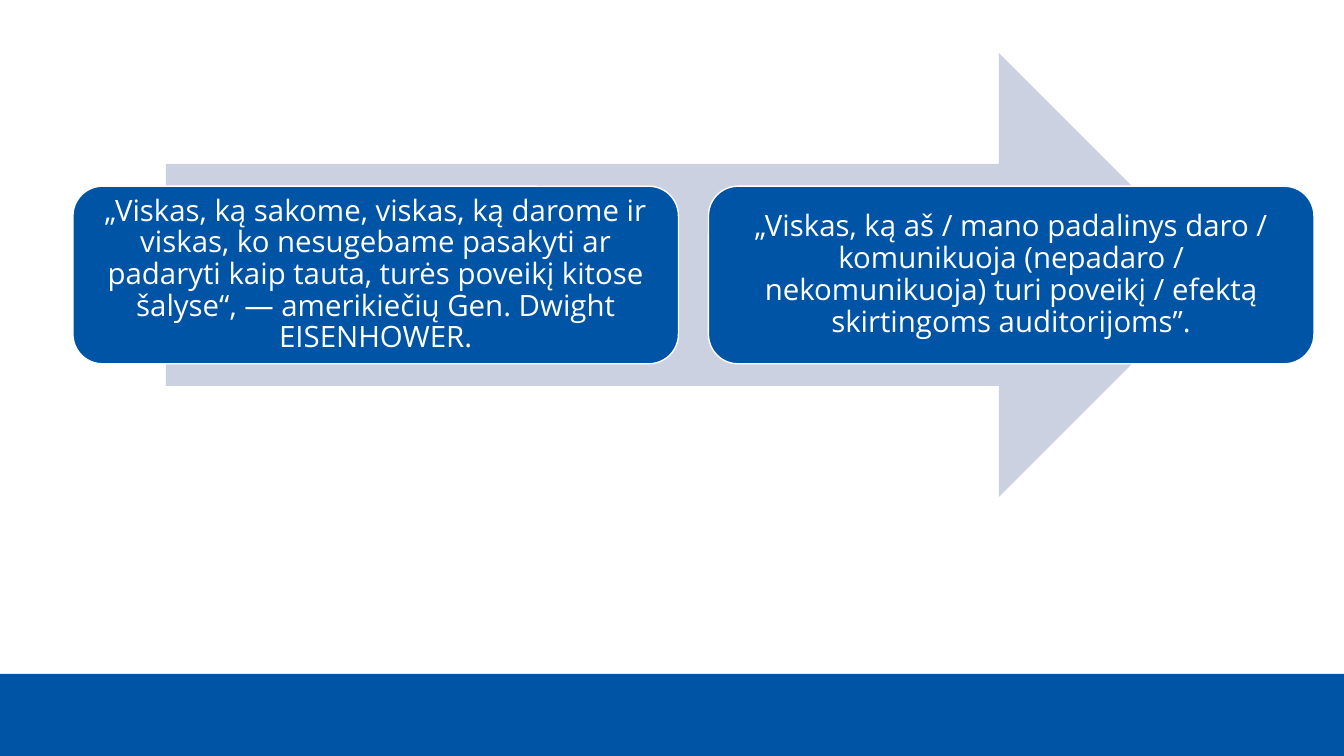
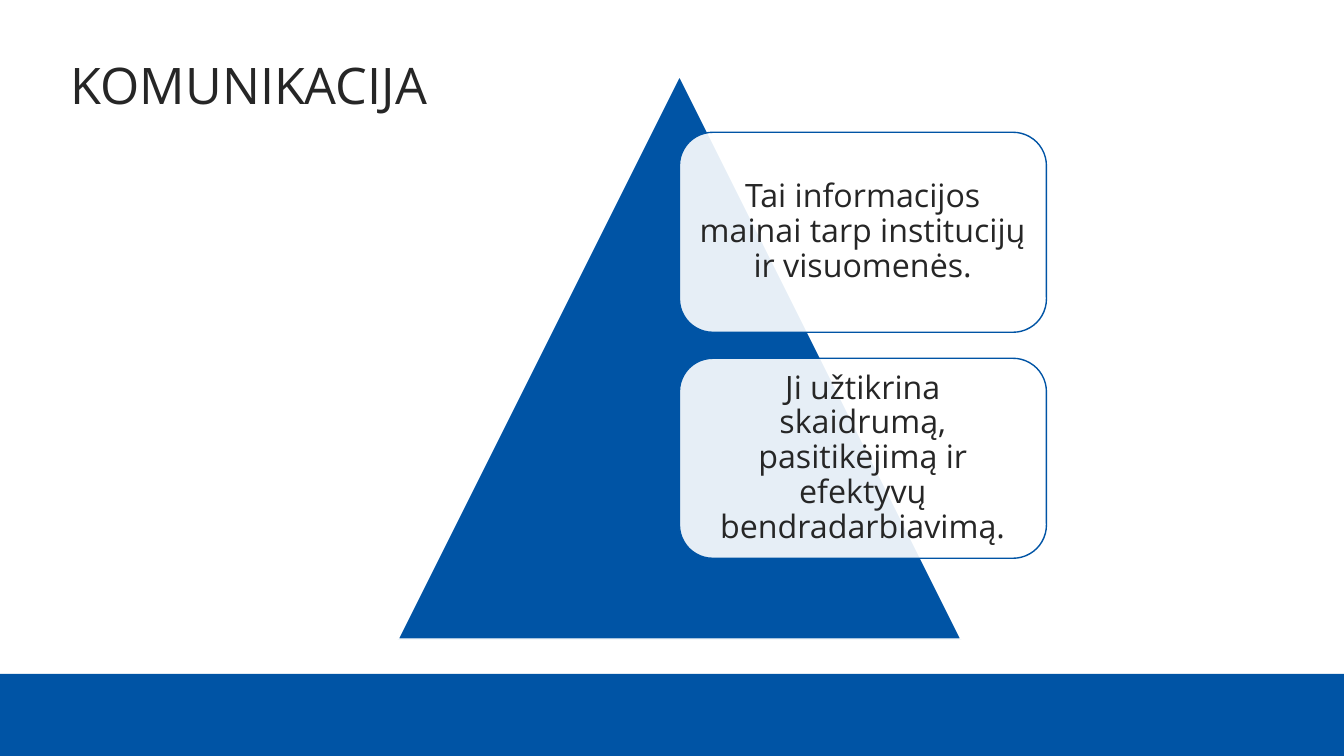
from lxml.etree import SubElement
from pptx import Presentation
from pptx.dml.color import RGBColor
from pptx.enum.shapes import MSO_SHAPE
from pptx.enum.text import MSO_ANCHOR, PP_ALIGN
from pptx.oxml.ns import qn
from pptx.util import Pt

PX = 914400 / 100.8
WIDTH, HEIGHT = 1344, 756
BAND_HEIGHT = 82
FONT = "Open Sans"
COLORS = {"blue": "0054A5", "pale": "CCD1E1", "white": "FFFFFF", "ink": "262626"}


def px(length):
    return round(length * PX)


def color(name):
    return RGBColor.from_string(COLORS[name])


def add_figure(slide, kind, box, fill, line=None, opacity=100):
    figure = slide.shapes.add_shape(kind, *map(px, box))
    figure.shadow.inherit = False
    figure.fill.solid()
    figure.fill.fore_color.rgb = color(fill)
    if opacity < 100:
        tint = figure.fill._xPr.find(qn("a:solidFill"))[0]
        SubElement(tint, qn("a:alpha"), val=str(opacity * 1000))
    if line:
        figure.line.color.rgb = color(line)
        figure.line.width = Pt(1)
    else:
        figure.line.fill.background()
    return figure


def write(frame, words, size, ink, align, anchor):
    frame.word_wrap = True
    frame.vertical_anchor = anchor
    paragraph = frame.paragraphs[0]
    paragraph.alignment = align
    paragraph.line_spacing = 0.9
    run = paragraph.add_run()
    run.text = words
    run.font.name = FONT
    run.font.size = Pt(size)
    run.font.color.rgb = color(ink)


def add_card(slide, box, words, size, inset, ink, **look):
    card = add_figure(slide, MSO_SHAPE.ROUNDED_RECTANGLE, box, **look)
    frame = card.text_frame
    frame.margin_left = frame.margin_right = px(inset)
    frame.margin_top = frame.margin_bottom = px(inset)
    write(frame, words, size, ink, PP_ALIGN.CENTER, MSO_ANCHOR.MIDDLE)


def add_title(slide, box, words):
    title = slide.shapes.add_textbox(*map(px, box))
    write(title.text_frame, words, 36, "ink", PP_ALIGN.LEFT, MSO_ANCHOR.BOTTOM)


def add_banded_slide(deck):
    slide = deck.slides.add_slide(deck.slide_layouts[6])
    band = (0, HEIGHT - BAND_HEIGHT, WIDTH, BAND_HEIGHT)
    add_figure(slide, MSO_SHAPE.RECTANGLE, band, "blue")
    return slide


def add_arrow_process(slide, box, quotes):
    left, top, width, height = box
    margin, gap = 93, 30
    add_figure(slide, MSO_SHAPE.RIGHT_ARROW,
               (left + margin, top, width - 2 * margin, height), "pale")
    card_width = (width - gap * (len(quotes) - 1)) / len(quotes)
    card_height = height * 0.4
    for index, quote in enumerate(quotes):
        card = (left + index * (card_width + gap), top + (height - card_height) / 2,
                card_width, card_height)
        add_card(slide, card, quote, 21, 9, "white", fill="blue", line="white")


def add_pyramid_list(slide, box, points):
    left, top, side, _ = box
    card_width, card_height, gap = 367, 200, 26
    add_figure(slide, MSO_SHAPE.ISOSCELES_TRIANGLE, box, "blue", "white")
    for index, point in enumerate(points):
        card = (left + side / 2, top + side / 10 + index * (card_height + gap),
                card_width, card_height)
        add_card(slide, card, point, 23, 10, "ink",
                 fill="white", line="blue", opacity=90)


def main():
    deck = Presentation()
    deck.slide_width, deck.slide_height = px(WIDTH), px(HEIGHT)

    add_arrow_process(add_banded_slide(deck), (73, 53, 1241, 444), [
        "„Viskas, ką sakome, viskas, ką darome ir viskas, ko nesugebame pasakyti "
        "ar padaryti kaip tauta, turės poveikį kitose šalyse“, — amerikiečių "
        "Gen. Dwight EISENHOWER.",
        "„Viskas, ką aš / mano padalinys daro / komunikuoja (nepadaro / "
        "nekomunikuoja) turi poveikį / efektą skirtingoms auditorijoms”.",
    ])

    communication = add_banded_slide(deck)
    add_pyramid_list(communication, (398, 76, 563, 563), [
        "Tai informacijos mainai tarp institucijų ir visuomenės.",
        "Ji užtikrina skaidrumą, pasitikėjimą ir efektyvų bendradarbiavimą.",
    ])
    add_title(communication, (61, 30, 1220, 90), "KOMUNIKACIJA")

    deck.save("out.pptx")


if __name__ == "__main__":
    main()
